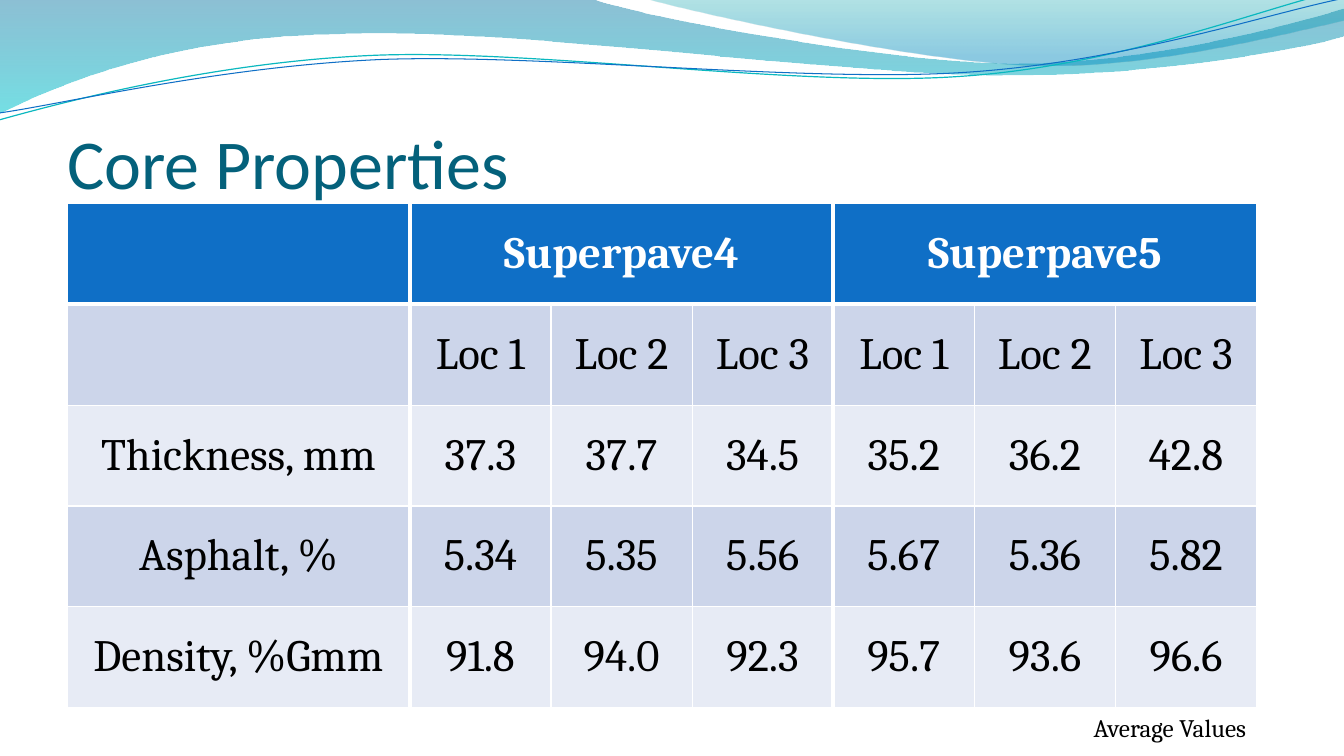
"""Build the Core Properties slide: a wave banner, a title, a table and a caption."""
import dataclasses

import lxml.etree
import pptx
import pptx.dml.color
import pptx.enum.text
import pptx.oxml.ns
import pptx.util

Pt = pptx.util.Pt
RGB = pptx.dml.color.RGBColor.from_string
Align = pptx.enum.text.PP_ALIGN
Anchor = pptx.enum.text.MSO_ANCHOR


@dataclasses.dataclass(frozen=True)
class Theme:
    """Colours, fonts and type sizes of the slide."""
    heading: str = "04617B"
    header: str = "0F6FC6"
    bands: tuple = ("E7EBF5", "CCD5EA")
    white: str = "FFFFFF"
    ink: str = "000000"
    teal_line: str = "0AB8BF"
    wide_wave: tuple = ((0, "0074A1", 45), (1, "00C6CF", 55))
    right_wave: tuple = ((0, "00A1A9", 30), (0.8, "008BBF", 45))
    title_font: str = "Calibri"
    body_font: str = "Cambria"
    title_size: int = 50
    table_size: int = 32
    caption_size: int = 18


THEME = Theme()

WIDE_WAVE = [
    (0, 0), (422.6, -0.7),
    (456.5, 12.2, 637.2, 45.4, 727.9, 45.4),
    (819.4, 45.4, 920.2, 18.7, 959.8, 6.5),
    (961.2, 25.9),
    (943.9, 31.7, 835.2, 54.7, 715.7, 54),
    (596.9, 54, 366.5, 20.2, 247, 24.5),
    (123.1, 25.9, 43.9, 59.8, -0.7, 81.4),
    (0, 0),
]
RIGHT_WAVE = [
    (460.1, -0.7),
    (488.9, 7.9, 654.5, 44.6, 738, 46.8),
    (821.5, 49.7, 923, 23, 959.8, 15.1),
    (959.8, 0), (460.1, -0.7),
]
TEAL_CURVE = [
    (-0.7, 85.7),
    (46.1, 72.7, 151.9, 44.6, 265.7, 39.6),
    (379.4, 34.6, 568.8, 62.6, 684, 54.7),
    (799.2, 47.5, 901.4, 5.8, 958.3, -7.2),
]
BLUE_CURVE = [
    (0, 80.6),
    (45.4, 74.2, 157, 47.5, 272.2, 42.5),
    (386.6, 38.2, 573.1, 59, 687.6, 51.8),
    (803.5, 44.6, 903.6, 10.1, 960.5, -1.4),
]

GROUPS = ["Superpave4", "Superpave5"]
GROUP_SIZE = 3
GROUP_STARTS = (1, 4)
BODY = [
    ["", "Loc 1", "Loc 2", "Loc 3", "Loc 1", "Loc 2", "Loc 3"],
    ["Thickness, mm", "37.3", "37.7", "34.5", "35.2", "36.2", "42.8"],
    ["Asphalt, %", "5.34", "5.35", "5.56", "5.67", "5.36", "5.82"],
    ["Density, %Gmm", "91.8", "94.0", "92.3", "95.7", "93.6", "96.6"],
]
COLUMN_WIDTHS = [244.8] + [100.8] * 6
ROW_HEIGHT = 72


def add_element(parent, tag, **attributes):
    """Append a drawing element to a parent and return it."""
    return lxml.etree.SubElement(parent, pptx.oxml.ns.qn(tag), attributes)


def write_text(frame, text, *, font, size, color, bold=False, align=Align.LEFT):
    """Write one formatted paragraph into a text frame."""
    para = frame.paragraphs[0]
    para.alignment = align
    span = para.add_run()
    span.text = text
    span.font.name = font
    span.font.size = Pt(size)
    span.font.bold = bold
    span.font.color.rgb = RGB(color)


def add_text_box(page, left, top, width, height, text, *, anchor=Anchor.TOP,
                 insets=(7.2, 3.6, 7.2, 3.6), wrap=True, **text_format):
    """Add a text box holding one paragraph."""
    box = page.shapes.add_textbox(Pt(left), Pt(top), Pt(width), Pt(height))
    frame = box.text_frame
    frame.word_wrap = wrap
    frame.vertical_anchor = anchor
    frame.margin_left, frame.margin_top, frame.margin_right, frame.margin_bottom = map(Pt, insets)
    write_text(frame, text, **text_format)


def bend_segments(shape, segments):
    """Join the three points of each curved segment into one cubic curve."""
    nodes = iter(list(shape.element.iter(pptx.oxml.ns.qn("a:lnTo"))))
    for segment in segments[1:]:
        line = next(nodes)
        if len(segment) == 6:
            line.tag_name = None
            curve = lxml.etree.Element(pptx.oxml.ns.qn("a:cubicBezTo"))
            line.addprevious(curve)
            for node in (line, next(nodes), next(nodes)):
                curve.append(node[0])
                node.getparent().remove(node)


def add_outline(page, segments, close):
    """Add a shadowless freeform of straight and cubic segments."""
    first, *rest = [(Pt(segment[i]), Pt(segment[i + 1]))
                    for segment in segments for i in range(0, len(segment), 2)]
    builder = page.shapes.build_freeform(*first)
    builder.add_line_segments(rest, close=close)
    shape = builder.convert_to_shape()
    bend_segments(shape, segments)
    shape.shadow.inherit = False
    return shape


def add_wave(page, segments, stops):
    """Add a closed wave with a translucent gradient from top to bottom."""
    wave = add_outline(page, segments, close=True)
    wave.line.fill.background()
    wave.fill.gradient()
    wave.fill.gradient_angle = 270
    for stop, (position, color, _) in zip(wave.fill.gradient_stops, stops):
        stop.position = position
        stop.color.rgb = RGB(color)
    for node, (_, _, opacity) in zip(wave.element.iter(pptx.oxml.ns.qn("a:srgbClr")), stops):
        add_element(node, "a:alpha", val=str(opacity * 1000))


def add_curve(page, segments, color, width):
    """Add an open curved line."""
    curve = add_outline(page, segments, close=False)
    curve.fill.background()
    curve.line.color.rgb = RGB(color)
    curve.line.width = Pt(width)


def style_cell(cell, fill, left, right, bottom):
    """Set the white borders, fill and anchor of a table cell."""
    properties = cell._tc.get_or_add_tcPr()
    for side, width in zip("LRTB", (left, right, 1, bottom)):
        border = add_element(properties, f"a:ln{side}", w=str(Pt(width)))
        add_element(add_element(border, "a:solidFill"), "a:srgbClr", val=THEME.white)
    cell.fill.solid()
    cell.fill.fore_color.rgb = RGB(fill)
    cell.vertical_anchor = Anchor.MIDDLE


def add_core_table(page, left, top):
    """Add the table of core properties with one merged header per mix."""
    header = [""] * len(COLUMN_WIDTHS)
    for start, name in zip(GROUP_STARTS, GROUPS):
        header[start] = name
    rows = [header] + BODY
    table = page.shapes.add_table(len(rows), len(header), Pt(left), Pt(top),
                                  Pt(sum(COLUMN_WIDTHS)), Pt(ROW_HEIGHT * len(rows))).table
    for column, width in zip(table.columns, COLUMN_WIDTHS):
        column.width = Pt(width)
    for start in GROUP_STARTS:
        table.cell(0, start).merge(table.cell(0, start + GROUP_SIZE - 1))
    for row_index, row in enumerate(rows):
        is_header = row_index == 0
        fill = THEME.header if is_header else THEME.bands[row_index % 2]
        for column_index, text in enumerate(row):
            cell = table.cell(row_index, column_index)
            reach = GROUP_SIZE if cell.is_merge_origin else 1
            style_cell(cell, fill,
                       left=3 if column_index in GROUP_STARTS else 1,
                       right=3 if column_index + reach in GROUP_STARTS else 1,
                       bottom=3 if is_header else 1)
            if text:
                write_text(cell.text_frame, text, font=THEME.body_font, size=THEME.table_size,
                           color=THEME.white if is_header else THEME.ink,
                           bold=is_header, align=Align.CENTER)


def main():
    """Build and save the deck."""
    deck = pptx.Presentation()
    deck.slide_width, deck.slide_height = Pt(960), Pt(540)
    page = deck.slides.add_slide(deck.slide_layouts[6])
    add_wave(page, WIDE_WAVE, THEME.wide_wave)
    add_wave(page, RIGHT_WAVE, THEME.right_wave)
    add_curve(page, TEAL_CURVE, THEME.teal_line, 0.85)
    add_curve(page, BLUE_CURVE, THEME.header, 0.75)
    add_text_box(page, 48, 55.4, 864, 90, "Core Properties", anchor=Anchor.BOTTOM,
                 insets=(0, 3.6, 0, 0), font=THEME.title_font, size=THEME.title_size,
                 color=THEME.heading)
    add_core_table(page, 48, 145.4)
    add_text_box(page, 774, 505.4, 130.3, 28.8, "Average Values", wrap=False,
                 font=THEME.body_font, size=THEME.caption_size, color=THEME.ink)
    deck.save("out.pptx")


if __name__ == "__main__":
    main()
